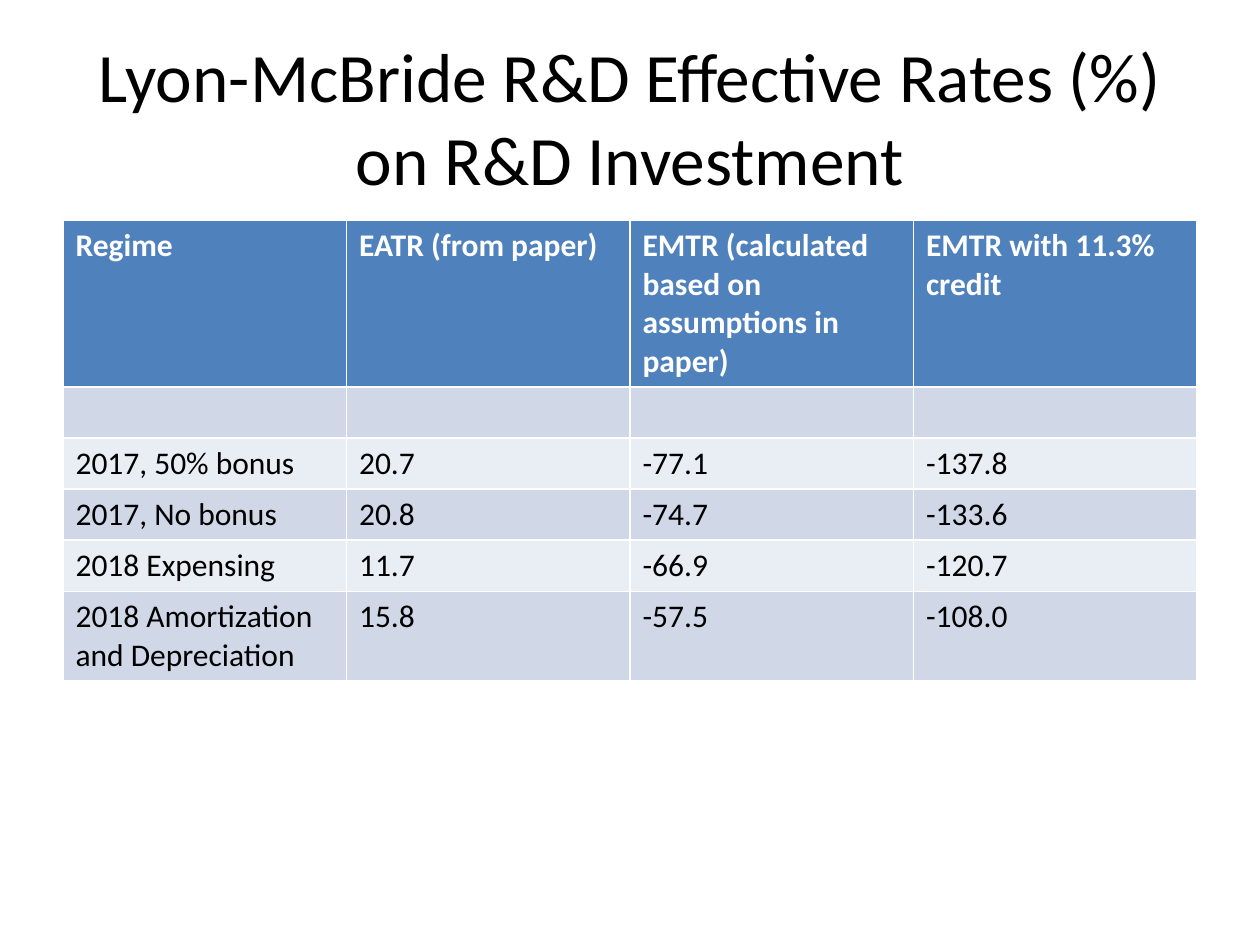
from pptx import Presentation
from pptx.dml.color import RGBColor
from pptx.enum.text import MSO_ANCHOR, PP_ALIGN
from pptx.util import Pt

MIDDLE, CENTER = MSO_ANCHOR.MIDDLE, PP_ALIGN.CENTER
BLACK = RGBColor(0x00, 0x00, 0x00)
WHITE = RGBColor(0xFF, 0xFF, 0xFF)
HEADER_BLUE = RGBColor(0x4F, 0x81, 0xBD)
BANDS = (RGBColor(0xD0, 0xD8, 0xE8), RGBColor(0xE9, 0xED, 0xF4))

TITLE = "Lyon-McBride R&D Effective Rates (%) on R&D Investment"
RATES = [
    ("Regime", "EATR (from paper)",
     "EMTR (calculated based on assumptions in paper)",
     "EMTR with 11.3% credit"),
    ("", "", "", ""),
    ("2017, 50% bonus", "20.7", "-77.1", "-137.8"),
    ("2017, No bonus", "20.8", "-74.7", "-133.6"),
    ("2018 Expensing", "11.7", "-66.9", "-120.7"),
    ("2018 Amortization and Depreciation", "15.8", "-57.5", "-108.0"),
]

LEFT, WIDTH = 36, 648
TITLE_TOP, TITLE_HEIGHT = 21.6, 90
TABLE_TOP, ROW_HEIGHT = 126, 29.2
TITLE_FONT = {"name": "Calibri", "size": Pt(39.6), "bold": False}
HEADER_FONT = {"name": "Calibri", "size": Pt(18), "bold": True}
BODY_FONT = {"name": "Calibri", "size": Pt(18), "bold": False}


def format_font(font, values, color):
    for name, value in values.items():
        setattr(font, name, value)
    font.color.rgb = color


def add_title(page):
    title = page.shapes.title
    title.left, title.top = Pt(LEFT), Pt(TITLE_TOP)
    title.width, title.height = Pt(WIDTH), Pt(TITLE_HEIGHT)
    frame = title.text_frame
    frame.text = TITLE
    frame.word_wrap = True
    frame.vertical_anchor = MIDDLE
    para = frame.paragraphs[0]
    para.alignment = CENTER
    format_font(para.runs[0].font, TITLE_FONT, BLACK)


def add_rates_table(page):
    """Add the table; its default style draws the white cell borders."""
    table = page.shapes.add_table(
        len(RATES), len(RATES[0]), Pt(LEFT), Pt(TABLE_TOP),
        Pt(WIDTH), Pt(ROW_HEIGHT * len(RATES))).table
    for row, values in enumerate(RATES):
        is_header = row == 0
        fill = HEADER_BLUE if is_header else BANDS[(row - 1) % 2]
        for column, value in enumerate(values):
            cell = table.cell(row, column)
            cell.fill.solid()
            cell.fill.fore_color.rgb = fill
            if value:
                cell.text = value
                format_font(cell.text_frame.paragraphs[0].runs[0].font,
                            HEADER_FONT if is_header else BODY_FONT,
                            WHITE if is_header else BLACK)


def main():
    deck = Presentation()
    deck.slide_width, deck.slide_height = Pt(720), Pt(540)
    page = deck.slides.add_slide(deck.slide_layouts[5])
    add_title(page)
    add_rates_table(page)
    deck.save("out.pptx")


if __name__ == "__main__":
    main()
